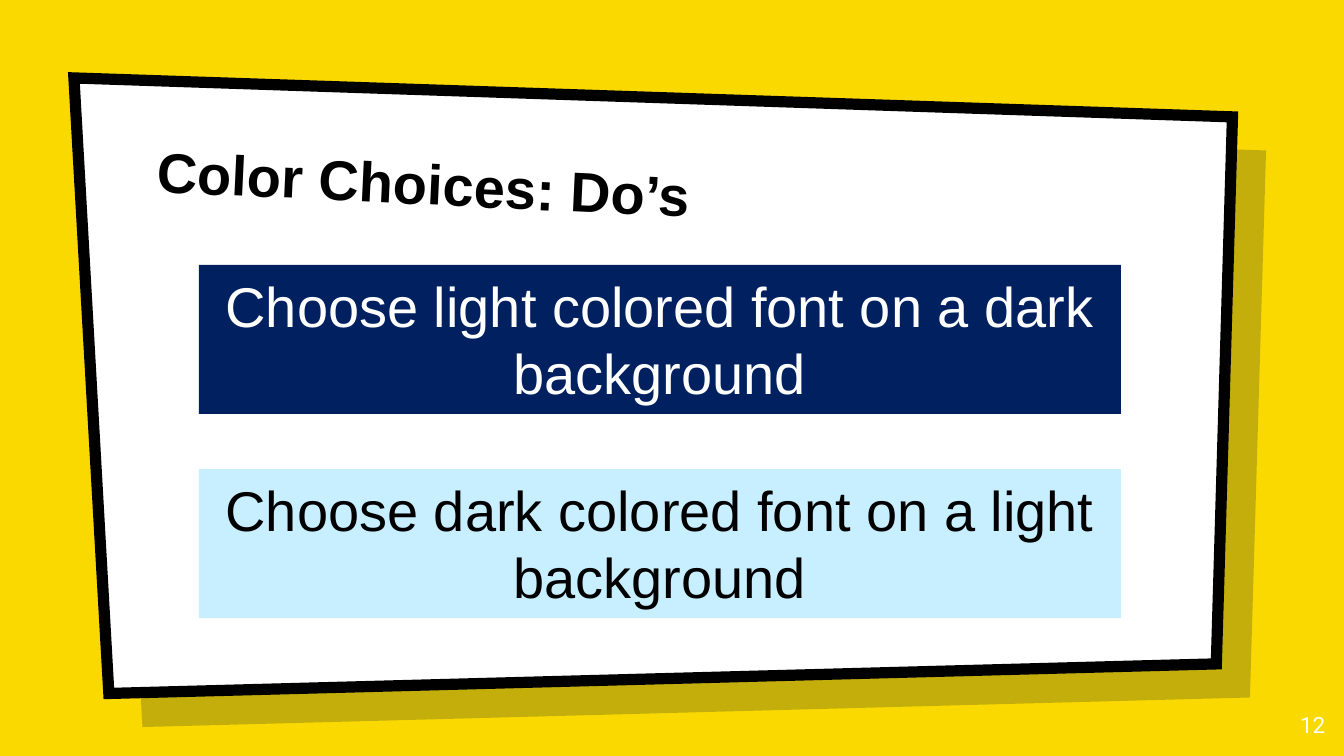
from lxml.etree import SubElement
from pptx import Presentation
from pptx.dml.color import RGBColor
from pptx.enum.shapes import MSO_SHAPE
from pptx.enum.text import MSO_ANCHOR, PP_ALIGN
from pptx.oxml.ns import qn
from pptx.util import Inches, Pt

deck = Presentation()
deck.slide_width = Inches(10)
deck.slide_height = deck.slide_width * 9 // 16
GRID = deck.slide_width // 1000  # square cells, 1000 columns across the slide


def paint(fill, color):
    fill.solid()
    fill.fore_color.rgb = RGBColor.from_string(color)


def write(box, words, color, align, inset, **font_format):
    """Put one formatted paragraph into a shape, with its top and bottom inset in cells."""
    frame = box.text_frame
    frame.word_wrap = True
    frame.margin_left = frame.margin_right = 10 * GRID
    frame.margin_top = frame.margin_bottom = inset * GRID
    paragraph = frame.paragraphs[0]
    paragraph.alignment = align
    run = paragraph.add_run()
    run.text = words
    for attribute, value in font_format.items():
        setattr(run.font, attribute, value)
    paint(run.font.fill, color)
    return frame


slide = deck.slides.add_slide(deck.slide_layouts[6])
paint(slide.background.fill, "FAD900")
shapes = slide.shapes

# Slanted panel over its translucent shadow
corners = [(55, 58), (917, 87), (905, 494), (81, 516)]
panels = []
for offset, color in [(25, "001936"), (0, "FFFFFF")]:
    points = [(column + offset, row + offset) for column, row in corners]
    outline = shapes.build_freeform(*points[0], scale=GRID)
    outline.add_line_segments(points[1:], close=True)
    panel = outline.convert_to_shape()
    panel.shadow.inherit = False
    paint(panel.fill, color)
    panels.append(panel)

shade, card = panels
shade.line.fill.background()
shade_color = shade.fill._xPr.find(qn("a:solidFill"))[0]
SubElement(shade_color, qn("a:alpha"), val="22000")
paint(card.line.fill, "000000")
card.line.width = Pt(6)
SubElement(card.line._ln, qn("a:miter"), lim="800000")

heading = shapes.add_textbox(*(n * GRID for n in (107, 96, 769, 83)))
heading.rotation = 2.7
heading_frame = write(heading, "Color Choices: Do’s", "000000", PP_ALIGN.LEFT, 10,
                      name="Arial", size=Pt(30), bold=True)
heading_frame.vertical_anchor = MSO_ANCHOR.BOTTOM

page_number = shapes.add_textbox(*(n * GRID for n in (936, 519, 60, 43)))
write(page_number, "12", "FFFFFF", PP_ALIGN.RIGHT, 10, name="Roboto", size=Pt(12))

# Advice bars, evenly spaced down the panel
advice = [
    ("Choose light colored font on a dark background", "FFFFFF", "002060"),
    ("Choose dark colored font on a light background", "000000", "C8EFFF"),
]
for index, (words, ink, backdrop) in enumerate(advice):
    bounds = (148, 197 + 152 * index, 686, 111)
    bar = shapes.add_shape(MSO_SHAPE.RECTANGLE, *(n * GRID for n in bounds))
    bar.shadow.inherit = False
    bar.line.fill.background()
    paint(bar.fill, backdrop)
    bar_frame = write(bar, words, ink, PP_ALIGN.CENTER, 5, name="Arial", size=Pt(30))
    bar_frame.vertical_anchor = MSO_ANCHOR.TOP

deck.save("out.pptx")
